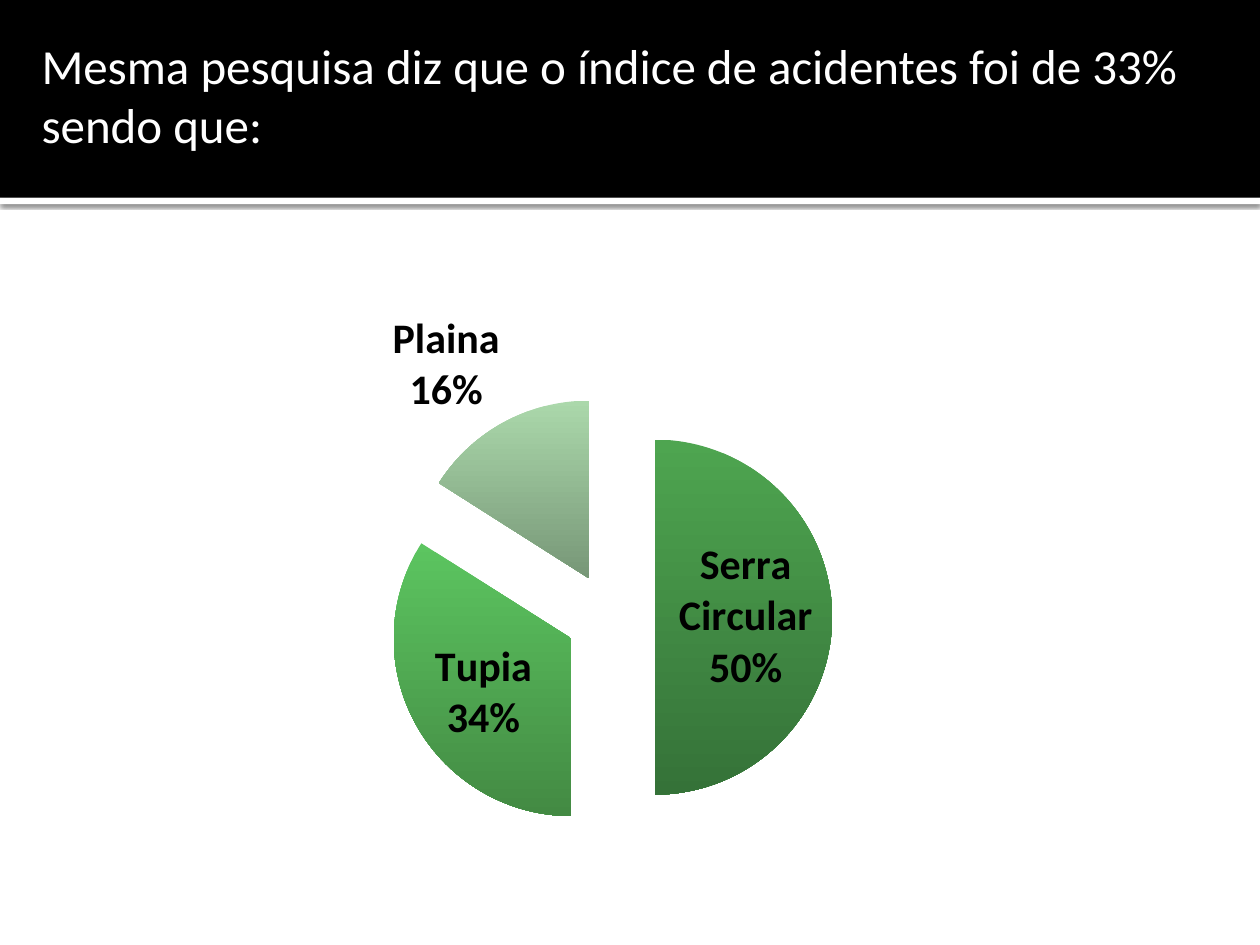
from dataclasses import dataclass

from lxml.etree import SubElement
from pptx import Presentation
from pptx.chart.data import CategoryChartData
from pptx.dml.color import RGBColor
from pptx.enum.chart import XL_CHART_TYPE, XL_LABEL_POSITION
from pptx.enum.shapes import MSO_SHAPE
from pptx.enum.text import MSO_ANCHOR, PP_ALIGN
from pptx.oxml import parse_xml
from pptx.oxml.ns import nsdecls, qn
from pptx.util import Inches, Pt


@dataclass(frozen=True)
class Theme:
    """Colours, font and type sizes of the deck."""
    font: str = "Calibri"
    dark: str = "000000"
    light: str = "FFFFFF"
    title_size: int = 28
    label_size: int = 24
    slices: tuple = (("4EA550", "357238"), ("5CC560", "438A43"), ("ABD8AB", "779777"))


def rgb(value):
    """Turn a hex value into a colour."""
    return RGBColor.from_string(value)


def apply(target, formats):
    """Set every format value on the target."""
    for attribute, value in formats.items():
        setattr(target, attribute, value)


class SlideBuilder:
    """Holds the theme and the current slide."""

    def __init__(self, presentation, theme):
        """Open a title-only slide."""
        self.theme = theme
        self.slide = presentation.slides.add_slide(presentation.slide_layouts[5])

    def style_font(self, font, size, color, bold):
        """Format a font in the theme typeface."""
        apply(font, {"name": self.theme.font, "size": Pt(size), "bold": bold})
        font.color.rgb = rgb(color)

    def band(self, top, height, color):
        """Add a full-width bar."""
        bar = self.slide.shapes.add_shape(
            MSO_SHAPE.RECTANGLE, 0, Inches(top), Inches(10), Inches(height))
        bar.shadow.inherit = False
        bar.fill.solid()
        bar.fill.fore_color.rgb = rgb(color)
        bar.line.fill.background()
        return bar

    def drop_shadow(self, bar):
        """Cast a soft shadow below a bar."""
        effects = bar._element.spPr.find(qn("a:effectLst"))
        effects.append(parse_xml(
            f'<a:outerShdw {nsdecls("a")} blurRad="{Pt(2.5)}" dist="{Pt(0.8)}" dir="5400000" '
            f'algn="tl" rotWithShape="0"><a:srgbClr val="{self.theme.dark}">'
            '<a:alpha val="60000"/></a:srgbClr></a:outerShdw>'))

    def title(self, text):
        """Place the title in front of the bands."""
        heading = self.slide.shapes.title
        apply(heading, {"left": Inches(0.23), "top": Inches(0.23),
                        "width": Inches(9.61), "height": Inches(1.04)})
        frame = heading.text_frame
        apply(frame, {"text": text, "word_wrap": True, "vertical_anchor": MSO_ANCHOR.MIDDLE})
        paragraph = frame.paragraphs[0]
        paragraph.alignment = PP_ALIGN.LEFT
        self.style_font(paragraph.runs[0].font, self.theme.title_size, self.theme.light, False)
        self.slide.shapes._spTree.append(heading._element)

    def pie(self, shares):
        """Add an exploded pie with category and percentage labels."""
        data = CategoryChartData()
        data.categories = list(shares)
        data.add_series("Series 1", list(shares.values()))
        chart = self.slide.shapes.add_chart(
            XL_CHART_TYPE.PIE_EXPLODED, Inches(1.09), Inches(2.25),
            Inches(7.66), Inches(4.86), data).chart
        apply(chart, {"has_legend": False, "has_title": False})
        self.style_font(chart.font, 10, self.theme.dark, False)
        plot = chart.plots[0]
        apply(plot, {"vary_by_categories": True, "has_data_labels": True})
        labels = plot.data_labels
        apply(labels, {"show_category_name": True, "show_percentage": True,
                       "show_value": False, "number_format": "0%",
                       "number_format_is_linked": False,
                       "position": XL_LABEL_POSITION.BEST_FIT})
        self.style_font(labels.font, self.theme.label_size, self.theme.dark, True)
        self.separate_lines(labels._element)
        for index, colors in enumerate(self.theme.slices):
            wedge = plot.series[0].points[index].format
            wedge.fill.gradient()
            wedge.fill.gradient_angle = 270
            for stop, color, position in zip(wedge.fill.gradient_stops, colors, (0, 1)):
                stop.color.rgb = rgb(color)
                stop.position = position
            wedge.line.fill.background()
        for explosion in plot._element.iter(qn("c:explosion")):
            explosion.set("val", "25")
        self.place_plot(chart)

    def separate_lines(self, labels):
        """Put name and percentage on separate lines."""
        separator = labels.makeelement(qn("c:separator"))
        separator.text = "\n"
        labels.find(qn("c:showBubbleSize")).addnext(separator)

    def place_plot(self, chart):
        """Fix the plot area inside the chart."""
        area = chart._chartSpace.find(".//" + qn("c:plotArea"))
        layout = area.find(qn("c:layout"))
        if layout is None:
            layout = area.makeelement(qn("c:layout"))
            area.insert(0, layout)
        manual = SubElement(layout, qn("c:manualLayout"))
        settings = {"layoutTarget": "inner", "xMode": "edge", "yMode": "edge",
                    "x": 0.26, "y": 0.18, "w": 0.46, "h": 0.73}
        for name, value in settings.items():
            SubElement(manual, qn(f"c:{name}")).set("val", str(value))


def main():
    """Build the accident survey slide."""
    presentation = Presentation()
    apply(presentation, {"slide_width": Inches(10), "slide_height": Inches(7.5)})
    theme = Theme()
    builder = SlideBuilder(presentation, theme)
    builder.drop_shadow(builder.band(1.57, 0.05, theme.light))
    builder.band(0, 1.57, theme.dark)
    builder.pie({"Serra Circular": 50, "Tupia": 34, "Plaina": 16})
    builder.title("Mesma pesquisa diz que o índice de acidentes foi de 33% sendo que:")
    presentation.save("out.pptx")


if __name__ == "__main__":
    main()
